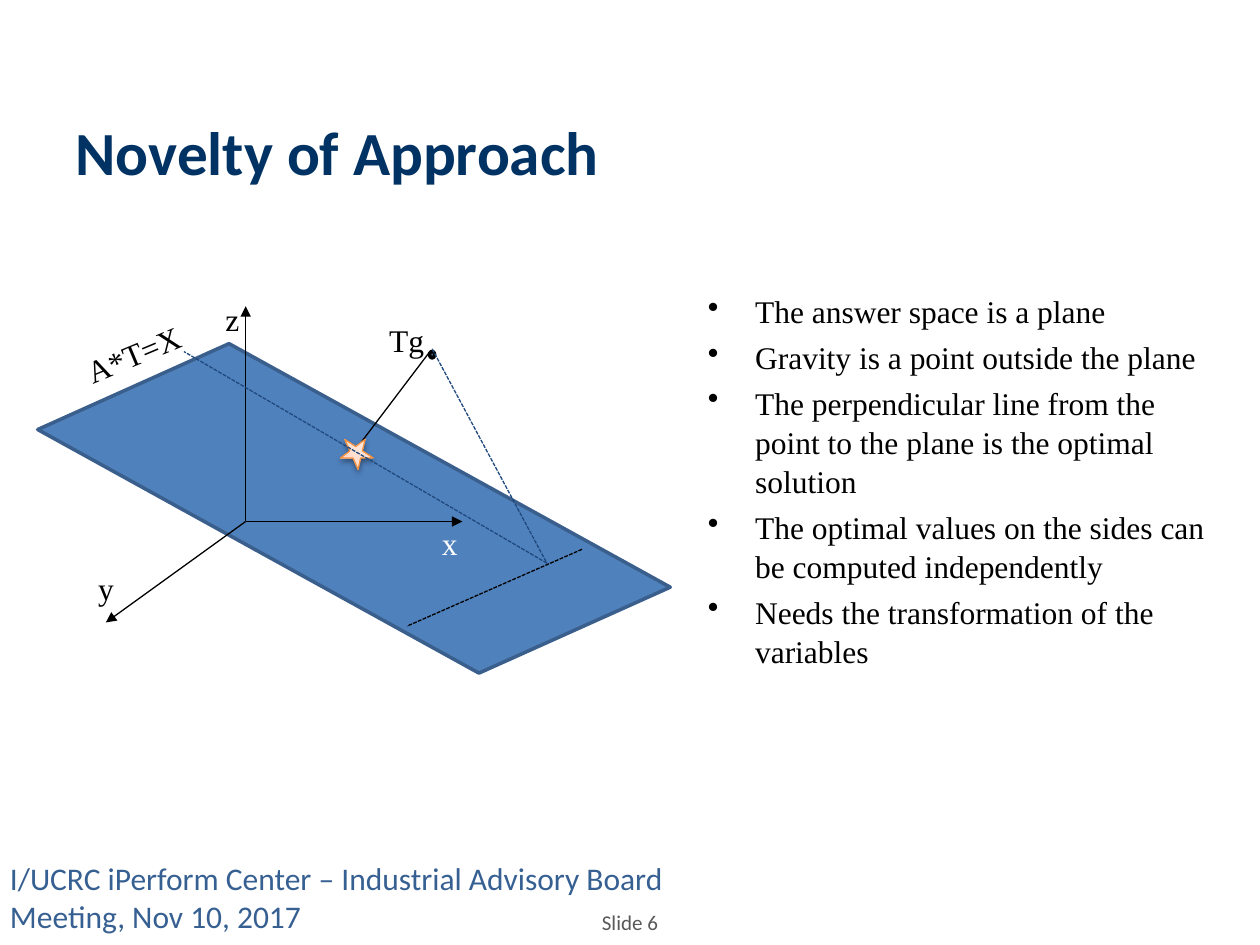
import copy
from dataclasses import dataclass

import pptx
import pptx.dml.color
import pptx.enum.dml
import pptx.enum.shapes
import pptx.enum.text
import pptx.oxml.ns
import pptx.oxml.xmlchemy
import pptx.util

Pt = pptx.util.Pt
RGB = pptx.dml.color.RGBColor
Form = pptx.enum.shapes.MSO_SHAPE
Align = pptx.enum.text.PP_ALIGN
Anchor = pptx.enum.text.MSO_ANCHOR
qn = pptx.oxml.ns.qn
make = pptx.oxml.xmlchemy.OxmlElement

BLACK = RGB(0x00, 0x00, 0x00)
WHITE = RGB(0xFF, 0xFF, 0xFF)
NAVY = RGB(0x00, 0x32, 0x63)
STEEL = RGB(0x37, 0x60, 0x92)
GRAY = RGB(0x59, 0x59, 0x59)
BLUE = RGB(0x4F, 0x81, 0xBD)
EDGE = RGB(0x3A, 0x5F, 0x8C)
DEEP = RGB(0x1F, 0x49, 0x7D)
AMBER = RGB(0xF6, 0x92, 0x40)
GLOW = [(0, RGB(0xFF, 0xD2, 0xBD)), (0.35, RGB(0xFF, 0xDE, 0xD0)),
        (1, RGB(0xFF, 0xF2, 0xED))]
SERIF, SANS = "Times New Roman", "Calibri"


@dataclass
class Line:
    start: tuple
    end: tuple
    color: RGB = BLACK
    dash: bool = False
    arrow: bool = False


@dataclass
class Label:
    text: str
    left: float
    top: float
    width: float
    color: RGB = BLACK
    turn: float = 0


# Key points of the diagram
ZERO, TIP, FOOT = (140.4, 298), (247, 199.4), (312.5, 321.8)

SOLID = [
    Line(ZERO, (264.2, 298), arrow=True),
    Line(ZERO, (140.4, 175), arrow=True),
    Line(ZERO, (60.5, 355.7), arrow=True),
    Line((246.2, 200.2), (205.9, 253.4)),
]
DASHED = [
    Line((332.6, 313.9), (232.6, 357.8), dash=True),
    Line(TIP, FOOT, DEEP, dash=True),
    Line(FOOT, (105.1, 200.9), DEEP, dash=True),
]
LABELS = [
    Label("x", 245.5, 295.9, 23.8, WHITE),
    Label("y", 49, 321.8, 23.8),
    Label("z", 121.7, 167.8, 22.3),
    Label("A*T=X", 41, 187.9, 71.3, turn=337.3),
    Label("Tg", 215.3, 180, 34.6),
]
POINTS = [
    "The answer space is a plane",
    "Gravity is a point outside the plane",
    "The perpendicular line from the point to the plane is the optimal solution",
    "The optimal values on the sides can be computed independently",
    "Needs the transformation of the variables",
]


def write(para, text: str, size: float, face: str, color: RGB, bold=False) -> None:
    run = para.add_run()
    run.text = text
    run.font.size, run.font.name, run.font.bold = Pt(size), face, bold
    run.font.color.rgb = color


def add_box(shapes, left: float, top: float, width: float, height: float, wrap=True):
    box = shapes.add_textbox(Pt(left), Pt(top), Pt(width), Pt(height))
    box.text_frame.word_wrap = wrap
    return box


def add_label(shapes, item: Label) -> None:
    box = add_box(shapes, item.left, item.top, item.width, 28.8, wrap=False)
    box.rotation = item.turn
    write(box.text_frame.paragraphs[0], item.text, 18, SERIF, item.color)


def add_line(shapes, item: Line) -> None:
    ends = [Pt(v) for v in item.start + item.end]
    link = shapes.add_connector(pptx.enum.shapes.MSO_CONNECTOR.STRAIGHT, *ends)
    link.line.color.rgb = item.color
    link.line.width = Pt(0.75)
    if item.dash:
        link.line.dash_style = pptx.enum.dml.MSO_LINE.SQUARE_DOT
    props = link._element.spPr
    if item.arrow:
        tail = make("a:tailEnd")
        tail.set("type", "triangle")
        props.find(qn("a:ln")).append(tail)
    props.append(make("a:effectLst"))


def add_form(shapes, kind, left: float, top: float, width: float, height: float,
             edge: RGB, weight: float, turn: float = 0):
    form = shapes.add_shape(kind, Pt(left), Pt(top), Pt(width), Pt(height))
    form.shadow.inherit = False
    form.rotation = turn
    form.fill.solid()
    form.fill.fore_color.rgb = BLUE
    form.line.color.rgb = edge
    form.line.width = Pt(weight)
    return form


def add_star(shapes) -> None:
    star = add_form(shapes, Form.STAR_5_POINT, 194.4, 249.8, 19.4, 16.6,
                    AMBER, 0.75, 33)
    star.fill.gradient()
    star.fill.gradient_angle = 90
    props = star._element.spPr
    stops = props.find(qn("a:gradFill")).find(qn("a:gsLst"))
    stops.append(copy.deepcopy(stops[-1]))
    for stop, (place, color) in zip(star.fill.gradient_stops, GLOW):
        stop.position = place
        stop.color.rgb = color
    # Soft shadow below the star
    shade = make("a:outerShdw")
    for key, value in (("blurRad", Pt(3.1)), ("dist", Pt(1.6)), ("dir", 5400000)):
        shade.set(key, str(int(value)))
    shade.set("rotWithShape", "0")
    tone = make("a:srgbClr")
    tone.set("val", str(BLACK))
    alpha = make("a:alpha")
    alpha.set("val", "38000")
    tone.append(alpha)
    shade.append(tone)
    props.find(qn("a:effectLst")).append(shade)


def add_points(shapes) -> None:
    frame = add_box(shapes, 397.4, 162.7, 301.7, 270).text_frame
    for i, text in enumerate(POINTS):
        para = frame.add_paragraph() if i else frame.paragraphs[0]
        props = para._p.get_or_add_pPr()
        props.set("marL", str(int(Pt(27))))
        props.set("indent", str(int(Pt(-27))))
        mark = make("a:buChar")
        mark.set("char", "•")
        props.append(mark)
        para.line_spacing = 1.04
        para.space_before = Pt(3.6 if i else 0)
        write(para, text, 18, SERIF, BLACK)


def main() -> None:
    deck = pptx.Presentation()
    deck.slide_width, deck.slide_height = Pt(720), Pt(540)
    slide = deck.slides.add_slide(deck.slide_layouts[5])
    shapes = slide.shapes

    # Title
    title = shapes.title
    title.left, title.top, title.width, title.height = Pt(36), Pt(49), Pt(648), Pt(62)
    title.text_frame.vertical_anchor = Anchor.BOTTOM
    para = title.text_frame.paragraphs[0]
    para.alignment = Align.LEFT
    write(para, "Novelty of Approach", 35, SANS, NAVY, bold=True)

    # Diagram
    parts = shapes.add_group_shape().shapes
    add_form(parts, Form.FLOWCHART_DATA, 22.3, 242.6, 360, 95.8, EDGE, 2, 208.9)
    for item in SOLID:
        add_line(parts, item)
    add_form(parts, Form.OVAL, 245.5, 200.9, 2.9, 3.6, BLACK, 2)
    add_star(parts)
    for item in DASHED:
        add_line(parts, item)
    for item in LABELS:
        add_label(parts, item)

    add_points(shapes)

    # Footer and slide number
    foot = add_box(shapes, -1.4, 487.4, 396.7, 51)
    write(foot.text_frame.paragraphs[0],
          "I/UCRC iPerform Center – Industrial Advisory Board Meeting, Nov 10, 2017",
          18, SANS, STEEL)
    page = add_box(shapes, 316, 512.6, 88, 28.8)
    page.text_frame.vertical_anchor = Anchor.MIDDLE
    para = page.text_frame.paragraphs[0]
    para.alignment = Align.CENTER
    write(para, "Slide 6", 12, SANS, GRAY)

    deck.save("out.pptx")


if __name__ == "__main__":
    main()
